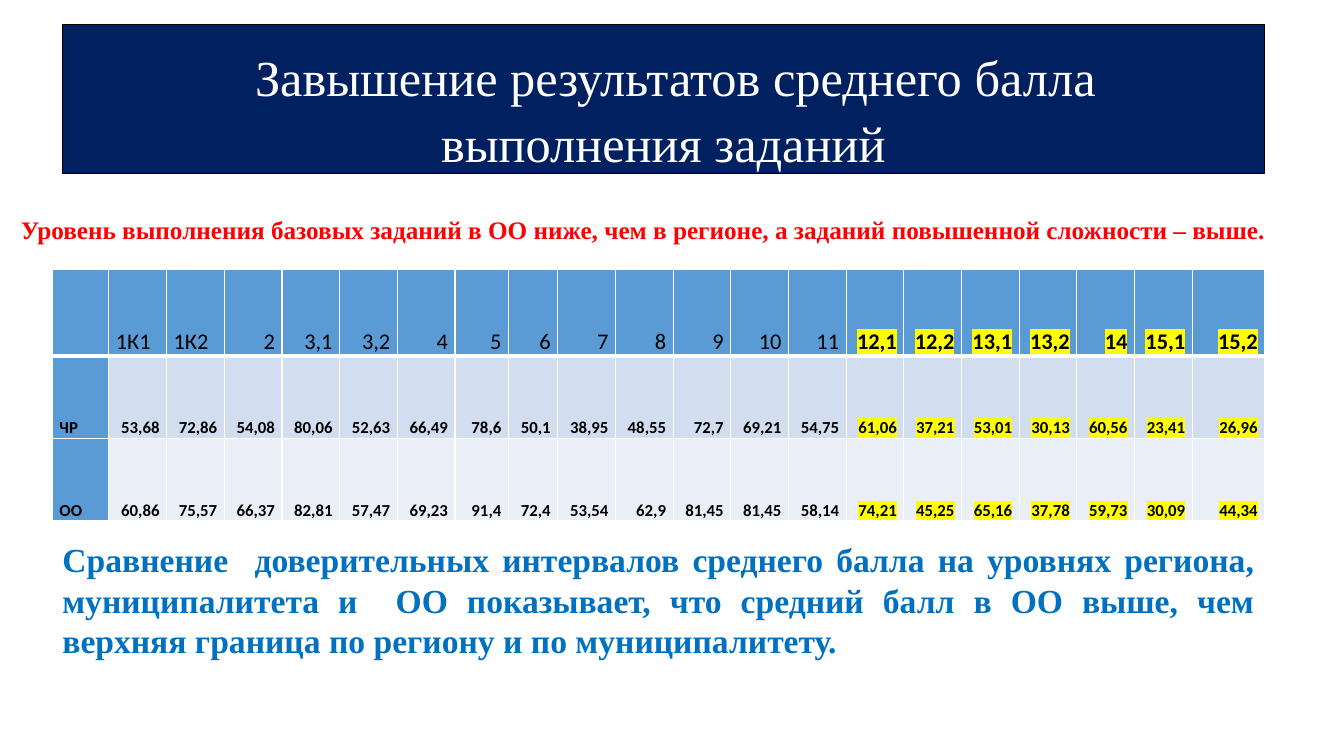
from dataclasses import dataclass

from lxml import etree
from pptx import Presentation
from pptx.dml.color import RGBColor
from pptx.enum.shapes import MSO_SHAPE
from pptx.enum.text import MSO_ANCHOR, MSO_AUTO_SIZE, PP_ALIGN
from pptx.oxml.ns import qn
from pptx.util import Inches, Pt

RECTANGLE = MSO_SHAPE.RECTANGLE
MIDDLE, BOTTOM = MSO_ANCHOR.MIDDLE, MSO_ANCHOR.BOTTOM
LEFT, CENTER = PP_ALIGN.LEFT, PP_ALIGN.CENTER
RIGHT, JUSTIFY = PP_ALIGN.RIGHT, PP_ALIGN.JUSTIFY
GROW = MSO_AUTO_SIZE.SHAPE_TO_FIT_TEXT


@dataclass(frozen=True)
class Theme:
    serif: str = "Times New Roman"
    sans: str = "Calibri"
    navy: str = "002060"
    black: str = "000000"
    white: str = "FFFFFF"
    red: str = "FF0000"
    blue: str = "0070C0"
    header: str = "5B9BD5"
    bands: tuple = ("D2DEEF", "EAEFF7")
    highlight: str = "FFFF00"
    title_size: int = 36
    conclusion_size: int = 24
    finding_size: int = 18
    header_size: int = 16
    value_size: int = 12


THEME = Theme()

TITLE = ["Завышение результатов среднего балла", "выполнения заданий"]
FINDING = (
    "Уровень выполнения базовых заданий в ОО ниже, чем в регионе, "
    "а заданий повышенной сложности – выше."
)
CONCLUSION = (
    "Сравнение  доверительных интервалов среднего балла на уровнях региона, "
    "муниципалитета и  ОО показывает, что средний балл в ОО выше, "
    "чем верхняя граница по региону и по муниципалитету."
)
TASKS = (
    "1К1 1К2 2 3,1 3,2 4 5 6 7 8 9 10 11 "
    "12,1 12,2 13,1 13,2 14 15,1 15,2"
).split()
REGION = (
    "53,68 72,86 54,08 80,06 52,63 66,49 78,6 50,1 38,95 48,55 72,7 69,21 54,75 "
    "61,06 37,21 53,01 30,13 60,56 23,41 26,96"
).split()
SCHOOL = (
    "60,86 75,57 66,37 82,81 57,47 69,23 91,4 72,4 53,54 62,9 81,45 81,45 58,14 "
    "74,21 45,25 65,16 37,78 59,73 30,09 44,34"
).split()
SCORES = [["", *TASKS], ["ЧР", *REGION], ["ОО", *SCHOOL]]
ROW_HEIGHTS = [0.86, 0.82, 0.82]
SPECIAL_WIDTHS = {0: 0.56, 7: 0.53, 8: 0.49, 20: 0.72}
FIRST_ADVANCED = TASKS.index("12,1") + 1


def color(code):
    return RGBColor.from_string(code)


def style_span(span, font, size, code, bold=False):
    span.font.name = font
    span.font.size = Pt(size)
    span.font.color.rgb = color(code)
    span.font.bold = bold


def highlight_span(span):
    fill = span._r.get_or_add_rPr().find(qn("a:solidFill"))
    mark = etree.Element(qn("a:highlight"))
    etree.SubElement(mark, qn("a:srgbClr"), val=THEME.highlight)
    fill.addnext(mark)


def border_cell(cell, widths):
    properties = cell._tc.get_or_add_tcPr()
    for side, width in zip(("lnL", "lnR", "lnT", "lnB"), widths):
        line = etree.SubElement(properties, qn(f"a:{side}"), w=str(Pt(width)))
        fill = etree.SubElement(line, qn("a:solidFill"))
        etree.SubElement(fill, qn("a:srgbClr"), val=THEME.white)


def add_title(page, box):
    banner = page.shapes.add_shape(RECTANGLE, *map(Inches, box))
    banner.shadow.inherit = False
    banner.fill.solid()
    banner.fill.fore_color.rgb = color(THEME.navy)
    banner.line.color.rgb = color(THEME.black)
    banner.line.width = Pt(1)
    frame = banner.text_frame
    frame.word_wrap = True
    frame.vertical_anchor = MIDDLE
    frame.margin_top = Inches(0.25)
    frame.text = "\n".join(TITLE)
    for para in frame.paragraphs:
        para.alignment = CENTER
        style_span(para.runs[0], THEME.serif, THEME.title_size, THEME.white)
    first = frame.paragraphs[0]
    first.space_after = Pt(4)
    first._p.get_or_add_pPr().set("marL", str(Inches(0.24)))


def add_statement(page, box, text, size, code, alignment):
    frame = page.shapes.add_textbox(*map(Inches, box)).text_frame
    frame.word_wrap = True
    frame.auto_size = GROW
    frame.text = text
    para = frame.paragraphs[0]
    para.alignment = alignment
    style_span(para.runs[0], THEME.serif, size, code, bold=True)


def fill_score_cell(cell, text, row, column):
    is_header = row == 0
    is_advanced = column >= FIRST_ADVANCED
    top = 3 if row == 1 else 1
    bottom = 3 if is_header else 1
    border_cell(cell, (1, 1, top, bottom))
    cell.fill.solid()
    is_label = is_header or column == 0
    cell.fill.fore_color.rgb = color(THEME.header if is_label else THEME.bands[row - 1])
    cell.vertical_anchor = BOTTOM
    cell.margin_left = cell.margin_right = Inches(0.07)
    cell.margin_top = cell.margin_bottom = 0
    if not text:
        return
    cell.text_frame.text = text
    para = cell.text_frame.paragraphs[0]
    para.line_spacing = 1.07
    para.alignment = LEFT if column == 0 or (is_header and column < 3) else RIGHT
    span = para.runs[0]
    size = THEME.header_size if is_header else THEME.value_size
    style_span(span, THEME.sans, size, THEME.black, bold=not is_header or is_advanced)
    if is_advanced:
        highlight_span(span)


def add_scores(page, box):
    count = len(SCORES[0])
    table = page.shapes.add_table(len(SCORES), count, *map(Inches, box)).table
    spare = box[2] - sum(SPECIAL_WIDTHS.values())
    regular = spare / (count - len(SPECIAL_WIDTHS))
    for index, column in enumerate(table.columns):
        column.width = Inches(SPECIAL_WIDTHS.get(index, regular))
    for row, height in enumerate(ROW_HEIGHTS):
        table.rows[row].height = Inches(height)
        for column, text in enumerate(SCORES[row]):
            fill_score_cell(table.cell(row, column), text, row, column)


def main():
    deck = Presentation()
    deck.slide_width = Inches(13.33)
    deck.slide_height = Inches(7.5)
    page = deck.slides.add_slide(deck.slide_layouts[6])
    add_title(page, (0.62, 0.24, 11.92, 1.48))
    add_scores(page, (0.52, 2.67, 12.03, 2.5))
    add_statement(page, (0.52, 5.3, 12.02, 1.31), CONCLUSION,
                  THEME.conclusion_size, THEME.blue, JUSTIFY)
    add_statement(page, (0.11, 2.08, 13.1, 0.4), FINDING,
                  THEME.finding_size, THEME.red, LEFT)
    deck.save("out.pptx")


if __name__ == "__main__":
    main()
